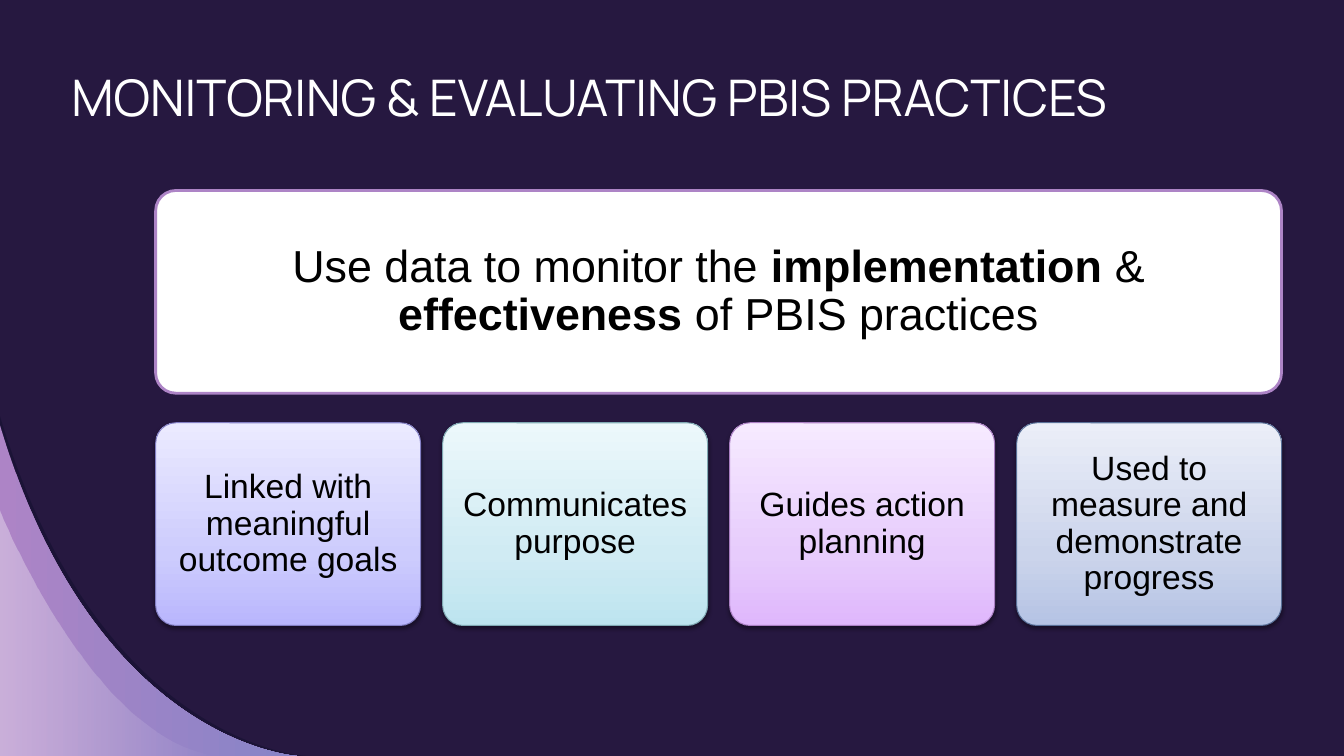
from lxml.etree import SubElement as Sub
from pptx import Presentation
from pptx.dml.color import RGBColor as Rgb
from pptx.enum.shapes import MSO_SHAPE as Shape
from pptx.enum.text import MSO_ANCHOR as Anchor, MSO_AUTO_SIZE as Auto, PP_ALIGN as Align
from pptx.oxml.ns import qn
from pptx.util import Pt


class Theme:
    back, white, black = "261840", "FFFFFF", "000000"
    mauve, blue, shade = "AD84C6", "8784C7", "12102F"
    head, body = "Manrope", "Arial"
    title, lead, card = 36, 32, 24


def tint(shape, stops, turn=0):
    """Fill with (place, colour, opacity) stops; turn is clockwise degrees."""
    shape.fill.gradient()
    grad = shape._element.spPr.find(qn("a:gradFill"))
    grad.find(qn("a:lin")).set("ang", str(turn * 60000))
    ramp = grad.find(qn("a:gsLst"))
    for old in list(ramp):
        ramp.remove(old)
    for place, tone, alpha in stops:
        stop = Sub(ramp, qn("a:gs"), pos=str(place * 1000))
        color = Sub(stop, qn("a:srgbClr"), val=tone)
        if alpha < 100:
            Sub(color, qn("a:alpha"), val=str(alpha * 1000))


def write(shape, runs, font, inset, anchor, align, space):
    """Set (text, bold) runs as one paragraph; font is (name, size, colour)."""
    frame = shape.text_frame
    look = {"word_wrap": True, "auto_size": Auto.NONE, "vertical_anchor": anchor}
    look |= {"margin_" + side: Pt(inset) for side in ("left", "top", "right", "bottom")}
    for key, val in look.items():
        setattr(frame, key, val)
    para = frame.paragraphs[0]
    para.alignment, para.line_spacing = align, space
    name, size, tone = font
    for text, bold in runs:
        run = para.add_run()
        run.text = text
        for key, val in {"name": name, "size": Pt(size), "bold": bold}.items():
            setattr(run.font, key, val)
        run.font.color.rgb = Rgb.from_string(tone)


deck = Presentation()
deck.slide_width, deck.slide_height = Pt(960), Pt(540)
slide = deck.slides.add_slide(deck.slide_layouts[5])
slide.background.fill.solid()
slide.background.fill.fore_color.rgb = Rgb.from_string(Theme.back)
shapes = slide.shapes

# Corner swoosh: each edge is a cubic curve from the left side to the bottom
waves = [
    ([(0, 297.4), (70.6, 532.1), (218, 540), (218, 540)],
     [(0, Theme.shade, 54), (100, Theme.shade, 54)]),
    ([(0, 303.8), (68.4, 532.1), (212.4, 540), (212.4, 540)],
     [(0, Theme.mauve, 100), (100, Theme.blue, 100)]),
    ([(0, 364.3), (0, 364.3), (65.5, 529.2), (155.5, 540)],
     [(0, Theme.white, 36), (100, Theme.white, 0)]),
]
for knots, stops in waves:
    start, *rest = [(Pt(x), Pt(y)) for x, y in knots + [(0, 540)]]
    pen = shapes.build_freeform(*start)
    pen.add_line_segments(rest, close=True)
    wave = pen.convert_to_shape()
    # Join the first three segments into one curve
    route = next(wave._element.iter(qn("a:path")))
    lines = route.findall(qn("a:lnTo"))[:3]
    curve = Sub(route, qn("a:cubicBezTo"))
    lines[0].addprevious(curve)
    for line in lines:
        curve.append(line[0])
        route.remove(line)
    wave.shadow.inherit = False
    wave.line.fill.background()
    tint(wave, stops)

# Title
title = shapes.title
for key, val in {"left": 43.7, "top": 39.8, "width": 872, "height": 66}.items():
    setattr(title, key, Pt(val))
write(title, [("MONITORING & EVALUATING PBIS PRACTICES", False)],
      (Theme.head, Theme.title, Theme.white), 7.2, Anchor.TOP, Align.LEFT, 1.0)

# Lead panel and the four cards: box, runs, size, inset, fill tones, line
left, wide, tall, gap = 111.2, 189.2, 144.8, 15.8
boxes = [((left, 136.1, 4 * wide + 3 * gap, tall),
          [("Use data to monitor the ", False), ("implementation", True), (" & ", False),
           ("effectiveness", True), (" of PBIS practices", False)],
          Theme.lead, 9.6, [Theme.white], (Theme.mauve, 2))]
cards = [
    ("Linked with meaningful outcome goals", ["B9B6FD", "CDCCFD", "EBEAFF"], "837FC4"),
    ("Communicates purpose", ["BDE4EF", "D0EBF3", "ECF8FB"], "80A9B3"),
    ("Guides action planning", ["DFB7FC", "E7CCFC", "F6EAFF"], "AA7FC3"),
    ("Used to measure and demonstrate progress", ["B5C3E4", "CBD4EB", "EBEEF8"], "597098"),
]
for n, (text, tones, rim) in enumerate(cards):
    boxes.append(((left + n * (wide + gap), 302, wide, tall), [(text, False)],
                  Theme.card, 7.2, tones, (rim, 0.75)))

for box, runs, size, inset, tones, (rim, weight) in boxes:
    panel = shapes.add_shape(Shape.ROUNDED_RECTANGLE, *map(Pt, box))
    panel.adjustments[0] = 0.1
    panel.shadow.inherit = False
    panel.line.color.rgb = Rgb.from_string(rim)
    panel.line.width = Pt(weight)
    if len(tones) == 1:
        panel.fill.solid()
        panel.fill.fore_color.rgb = Rgb.from_string(tones[0])
    else:
        tint(panel, zip((0, 35, 100), tones, (100, 100, 100)), 270)
        # Soft shadow below the card
        glow = Sub(panel._element.spPr.find(qn("a:effectLst")), qn("a:outerShdw"),
                   blurRad=str(Pt(3.1)), dist=str(Pt(1.6)), dir="5400000", rotWithShape="0")
        color = Sub(glow, qn("a:srgbClr"), val=Theme.black)
        Sub(color, qn("a:alpha"), val="38000")
    write(panel, runs, (Theme.body, size, Theme.black), inset,
          Anchor.MIDDLE, Align.CENTER, 0.9)

deck.save("out.pptx")
